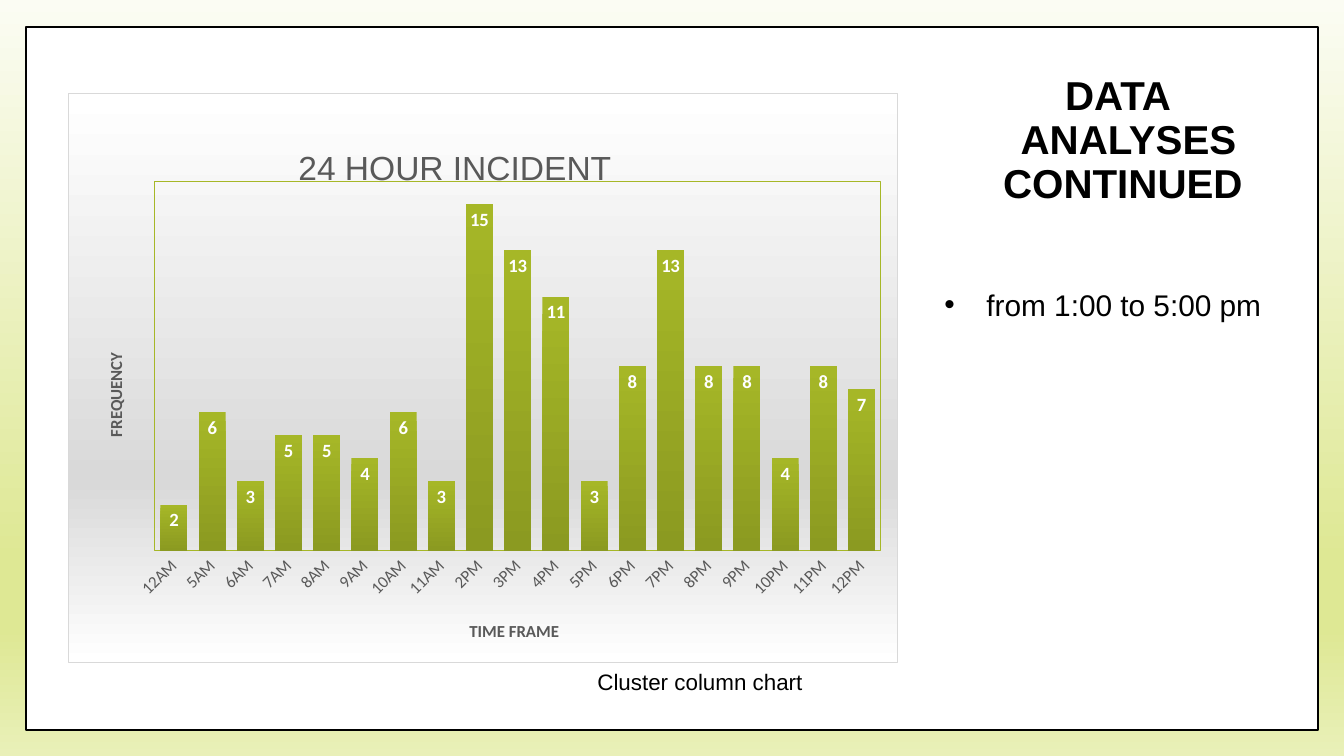
"""Build the slide with the 24 hour incident column chart."""
import pptx
import pptx.chart.data
import pptx.dml.color
import pptx.enum.chart
import pptx.enum.shapes
import pptx.enum.text
import pptx.oxml
import pptx.oxml.ns
import pptx.util

PX = 914400 / 134.4
THEME = {
    "font": "Arial", "chart_font": "Calibri",
    "title": 21.6, "list": 16, "caption": 12,
    "chart_title": 18, "label": 10, "axis": 9,
    "black": "000000", "white": "FFFFFF", "grey": "595959",
    "border": "D9D9D9", "green": "A6B727",
    "page": [(0, "FBFCF3"), (74, "DEE894"), (83, "DEE894"), (100, "E9F0B8")],
    "panel": [(0, "FFFFFF"), (68, "D9D9D9"), (100, "FFFFFF")],
    "bars": [(0, "A6B727"), (100, "8B9A21")],
}
NAMESPACES = pptx.oxml.ns.nsdecls("a", "c")
color = pptx.dml.color.RGBColor.from_string
qn = pptx.oxml.ns.qn


def gradient(stops):
    """Return the XML of a gradient that runs from top to bottom."""
    marks = "".join(
        f'<a:gs pos="{at * 1000}"><a:srgbClr val="{rgb}"/></a:gs>' for at, rgb in stops)
    return (f'<a:gradFill {NAMESPACES} rotWithShape="1"><a:gsLst>{marks}</a:gsLst>'
            '<a:lin ang="5400000" scaled="0"/></a:gradFill>')


def place(parent, left, top, size=""):
    """Give a chart part a manual layout in fractions of the chart."""
    for layout in parent.findall(qn("c:layout")):
        parent.remove(layout)
    target = '<c:layoutTarget val="inner"/>' if size else ""
    layout = pptx.oxml.parse_xml(
        f'<c:layout {NAMESPACES}><c:manualLayout>{target}'
        '<c:xMode val="edge"/><c:yMode val="edge"/>'
        f'<c:x val="{left}"/><c:y val="{top}"/>{size}</c:manualLayout></c:layout>')
    parent.insert(0 if parent.find(qn("c:tx")) is None else 1, layout)


deck = pptx.Presentation()
deck.slide_width, deck.slide_height = round(1344 * PX), round(756 * PX)
page = deck.slides.add_slide(deck.slide_layouts[3])
page.background.fill.solid()
backdrop = page._element.find(".//" + qn("p:bgPr"))
backdrop.remove(backdrop.find(qn("a:solidFill")))
backdrop.insert(0, pptx.oxml.parse_xml(gradient(THEME["page"])))

frame = page.shapes.add_shape(
    pptx.enum.shapes.MSO_SHAPE.RECTANGLE, *[round(n * PX) for n in (26, 27, 1292, 703)])
frame.shadow.inherit = False
frame.fill.solid()
frame.fill.fore_color.rgb = color(THEME["white"])
frame.line.color.rgb = color(THEME["black"])
frame.line.width = pptx.util.Pt(1)
page.shapes._spTree.insert(2, frame._element)

title, listing, caption = page.placeholders
texts = [
    (title, (913, 67, 431, 149), "DATA  \vANALYSES\vCONTINUED ", "title", 0.9),
    (listing, (931, 280, 346, 50), "from 1:00 to 5:00 pm", "list", 1),
    (caption, (579, 664, 319, 92), "Cluster column chart", "caption", 0.9),
]
for box, place_px, words, role, spacing in texts:
    box.left, box.top, box.width, box.height = [round(n * PX) for n in place_px]
    box.text_frame.text = words
    box.text_frame.word_wrap = True
    box.text_frame.auto_size = pptx.enum.text.MSO_AUTO_SIZE.NONE
    para = box.text_frame.paragraphs[0]
    para.line_spacing = spacing
    para.space_before = pptx.util.Pt(0)
    para.font.name = THEME["font"]
    para.font.size = pptx.util.Pt(THEME[role])
    para.font.bold = box is title
    para.font.color.rgb = color(THEME["black"])
title.text_frame.vertical_anchor = pptx.enum.text.MSO_ANCHOR.MIDDLE
title.text_frame.paragraphs[0].alignment = pptx.enum.text.PP_ALIGN.CENTER
for box, margin, indent, bullet in (
        (listing, 42, -42, f'<a:buChar {NAMESPACES} char="•"/>'),
        (caption, 5, 0, f'<a:buNone {NAMESPACES}/>')):
    settings = box.text_frame.paragraphs[0]._p.get_or_add_pPr()
    settings.set("marL", str(round(margin * PX)))
    settings.set("indent", str(round(indent * PX)))
    settings.find(qn("a:defRPr")).addprevious(pptx.oxml.parse_xml(bullet))

incidents = {
    "12AM": 2, "5AM": 6, "6AM": 3, "7AM": 5, "8AM": 5, "9AM": 4, "10AM": 6,
    "11AM": 3, "2PM": 15, "3PM": 13, "4PM": 11, "5PM": 3, "6PM": 8, "7PM": 13,
    "8PM": 8, "9PM": 8, "10PM": 4, "11PM": 8, "12PM": 7,
}
data = pptx.chart.data.CategoryChartData()
data.categories = list(incidents)
data.add_series("Series 1", list(incidents.values()))
chart = page.shapes.add_chart(
    pptx.enum.chart.XL_CHART_TYPE.COLUMN_CLUSTERED,
    *[round(n * PX) for n in (68, 93, 830, 570)], data).chart
chart.has_legend = False
chart.font.name = THEME["chart_font"]
chart.font.size = pptx.util.Pt(THEME["label"])
chart.font.color.rgb = color(THEME["black"])

hours, counts = chart.category_axis, chart.value_axis
hours.major_tick_mark = pptx.enum.chart.XL_TICK_MARK.NONE
hours.format.line.fill.background()
hours.tick_labels.font.name = THEME["chart_font"]
hours.tick_labels.font.size = pptx.util.Pt(THEME["axis"])
hours.tick_labels.font.color.rgb = color(THEME["grey"])
hours._element.find(qn("c:txPr")).find(qn("a:bodyPr")).set("rot", "-2700000")
counts.minimum_scale, counts.maximum_scale = 0, 16
counts.has_major_gridlines = False
counts.visible = False

chart.has_title = True
headings = [
    (chart.chart_title, "24 HOUR INCIDENT", "font", "chart_title", False, 0.27, 0.08),
    (hours.axis_title, "TIME FRAME", "chart_font", "axis", True, 0.48, 0.92),
    (counts.axis_title, "FREQUENCY", "chart_font", "axis", True, 0.04, 0.45),
]
for heading, words, font, size, bold, left, top in headings:
    heading.text_frame.text = words
    para = heading.text_frame.paragraphs[0]
    para.font.name = THEME[font]
    para.font.size = pptx.util.Pt(THEME[size])
    para.font.bold = bold
    para.font.color.rgb = color(THEME["grey"])
    place(heading._element, left, top)
counts.axis_title.text_frame._txBody.find(qn("a:bodyPr")).set("rot", "-5400000")

plot = chart.plots[0]
plot.gap_width = 41
plot.vary_by_categories = False
bars = plot.series[0]
bars.format.fill.solid()
bar_look = bars._element.find(qn("c:spPr"))
bar_look.remove(bar_look.find(qn("a:solidFill")))
bar_look.insert(0, pptx.oxml.parse_xml(gradient(THEME["bars"])))
labels = bars.data_labels
labels.show_value = True
labels.position = pptx.enum.chart.XL_LABEL_POSITION.INSIDE_END
labels.font.name = THEME["chart_font"]
labels.font.size = pptx.util.Pt(THEME["label"])
labels.font.bold = True
labels.font.color.rgb = color(THEME["white"])

area = chart._chartSpace.find(".//" + qn("c:plotArea"))
place(area, 0.104, 0.154, '<c:w val="0.876"/><c:h val="0.65"/>')
outline = '<a:ln w="{}"><a:solidFill><a:srgbClr val="{}"/></a:solidFill></a:ln>'
area.append(pptx.oxml.parse_xml(
    f'<c:spPr {NAMESPACES}><a:noFill/>{outline.format(6350, THEME["green"])}</c:spPr>'))
chart._chartSpace.find(qn("c:chart")).addnext(pptx.oxml.parse_xml(
    f'<c:spPr {NAMESPACES}>{gradient(THEME["panel"])}'
    f'{outline.format(9525, THEME["border"])}</c:spPr>'))

deck.save("out.pptx")
